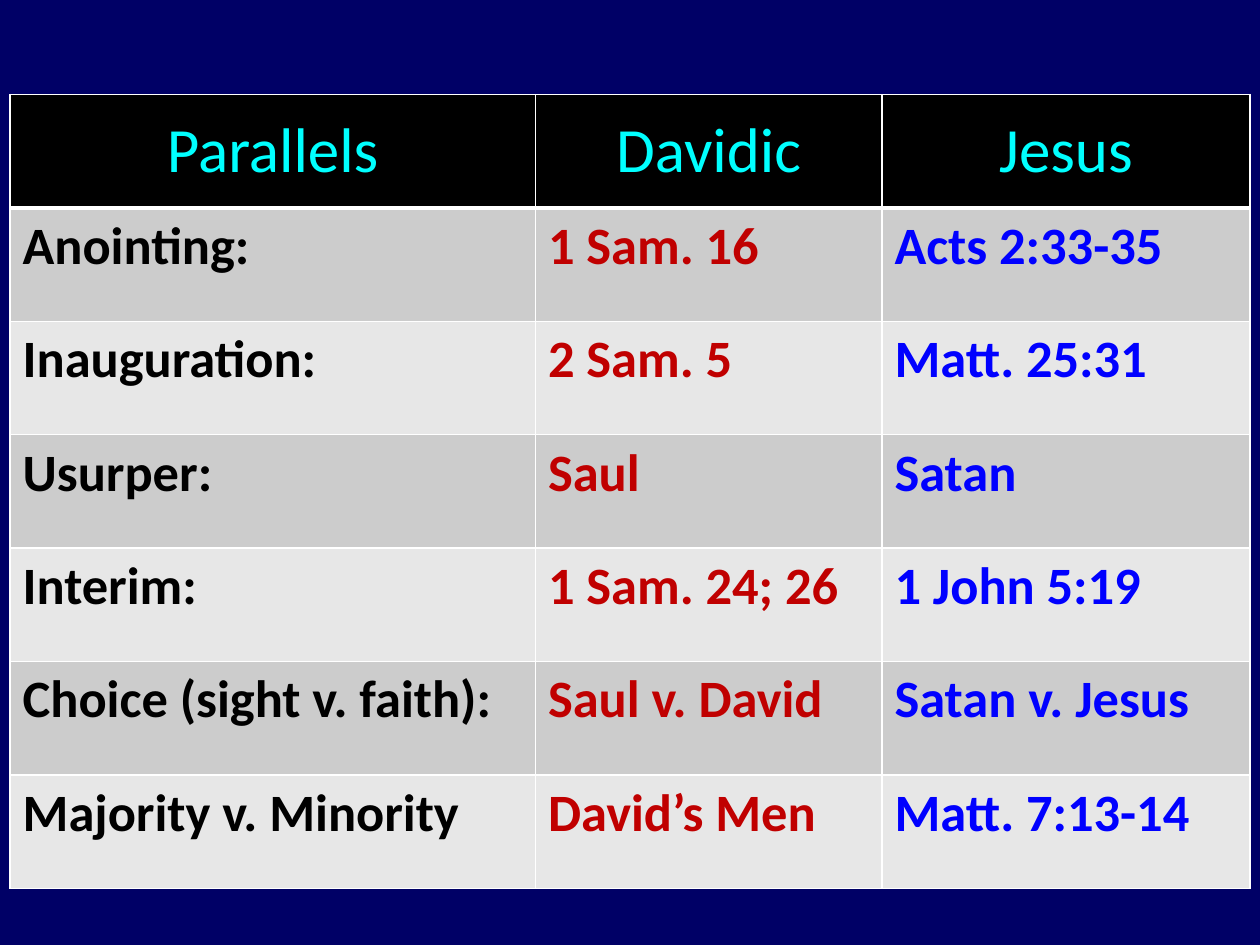
from lxml import etree
from pptx import Presentation
from pptx.dml.color import RGBColor
from pptx.enum.text import MSO_ANCHOR, PP_ALIGN
from pptx.oxml.ns import qn
from pptx.util import Inches, Pt

CENTER, LEFT = PP_ALIGN.CENTER, PP_ALIGN.LEFT
MIDDLE, TOP = MSO_ANCHOR.MIDDLE, MSO_ANCHOR.TOP

NAVY = RGBColor(0x00, 0x00, 0x66)
BLACK = RGBColor(0x00, 0x00, 0x00)
WHITE = RGBColor(0xFF, 0xFF, 0xFF)
CYAN = RGBColor(0x00, 0xFF, 0xFF)
RED = RGBColor(0xC0, 0x00, 0x00)
BLUE = RGBColor(0x00, 0x00, 0xFF)
BANDS = [RGBColor(0xE7, 0xE7, 0xE7), RGBColor(0xCC, 0xCC, 0xCC)]

ROWS = [
    ("Parallels", "Davidic", "Jesus"),
    ("Anointing:", "1 Sam. 16", "Acts 2:33-35"),
    ("Inauguration:", "2 Sam. 5", "Matt. 25:31"),
    ("Usurper:", "Saul", "Satan"),
    ("Interim:", "1 Sam. 24; 26", "1 John 5:19"),
    ("Choice (sight v. faith):", "Saul v. David", "Satan v. Jesus"),
    ("Majority v. Minority", "David’s Men", "Matt. 7:13-14"),
]
COL_WIDTHS = [4.17, 2.75, 2.92]
COL_COLORS = [BLACK, RED, BLUE]
ROW_HEIGHT = 0.9


def add_border(cell, side, width):
    tcPr = cell._tc.get_or_add_tcPr()
    ln = etree.SubElement(tcPr, qn(f"a:ln{side}"), w=str(Pt(width)))
    fill = etree.SubElement(ln, qn("a:solidFill"))
    etree.SubElement(fill, qn("a:srgbClr"), val=str(WHITE))


prs = Presentation()
prs.slide_width, prs.slide_height = Inches(10), Inches(7.5)
s = prs.slides.add_slide(prs.slide_layouts[6])
s.background.fill.solid()
s.background.fill.fore_color.rgb = NAVY

# Table grid
table = s.shapes.add_table(
    len(ROWS), len(COL_WIDTHS), Inches(0.08), Inches(0.75),
    Inches(sum(COL_WIDTHS)), Inches(ROW_HEIGHT * len(ROWS))).table
for col, width in zip(table.columns, COL_WIDTHS):
    col.width = Inches(width)
for row in table.rows:
    row.height = Inches(ROW_HEIGHT)

# Cells: black header row, then banded body rows
for i, texts in enumerate(ROWS):
    header = i == 0
    for j, text in enumerate(texts):
        cell = table.cell(i, j)
        # The rule under the header is heavier than the others
        widths = {"L": 1, "R": 1, "T": 3 if i == 1 else 1, "B": 3 if header else 1}
        for side, width in widths.items():
            add_border(cell, side, width)
        cell.fill.solid()
        cell.fill.fore_color.rgb = BLACK if header else BANDS[i % 2]
        cell.vertical_anchor = MIDDLE if header else TOP

        p = cell.text_frame.paragraphs[0]
        p.alignment = CENTER if header else LEFT
        r = p.add_run()
        r.text = text
        r.font.name = "Calibri"
        r.font.size = Pt(36 if header else 30)
        r.font.bold = not header
        r.font.color.rgb = CYAN if header else COL_COLORS[j]

prs.save("out.pptx")
